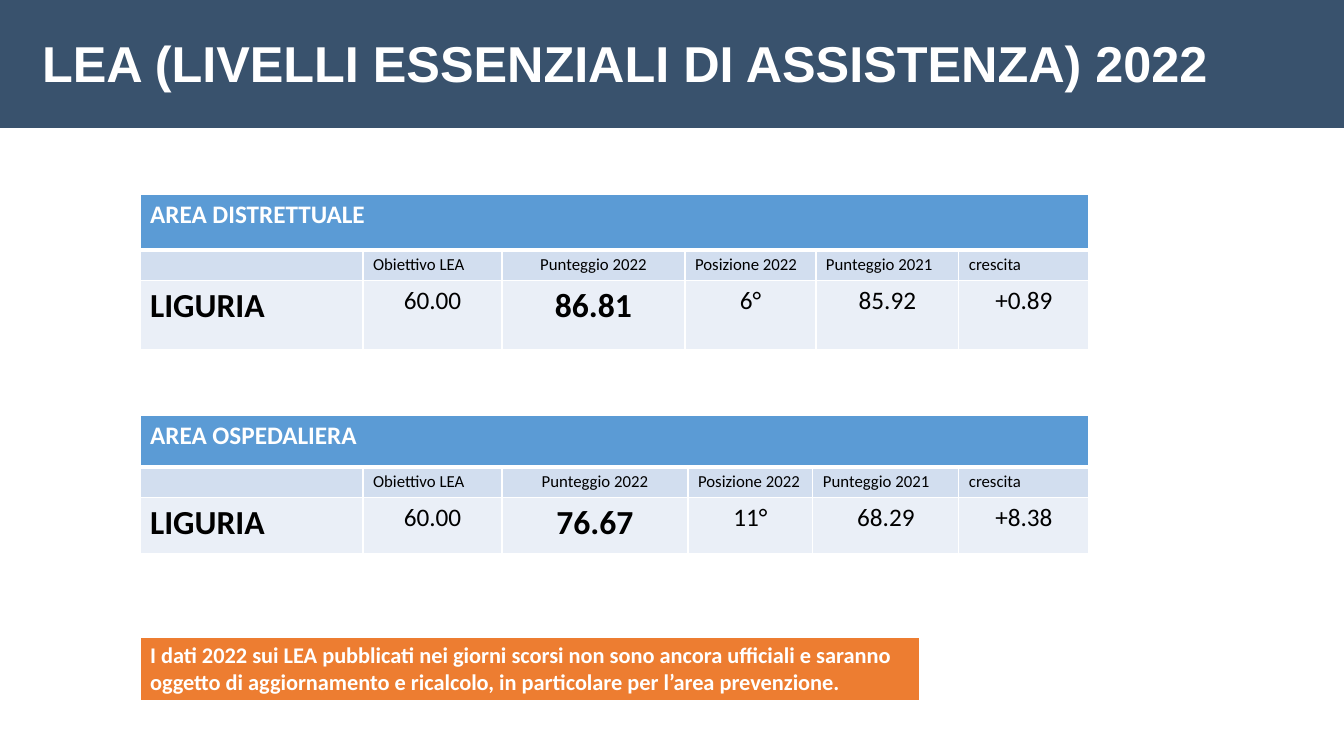
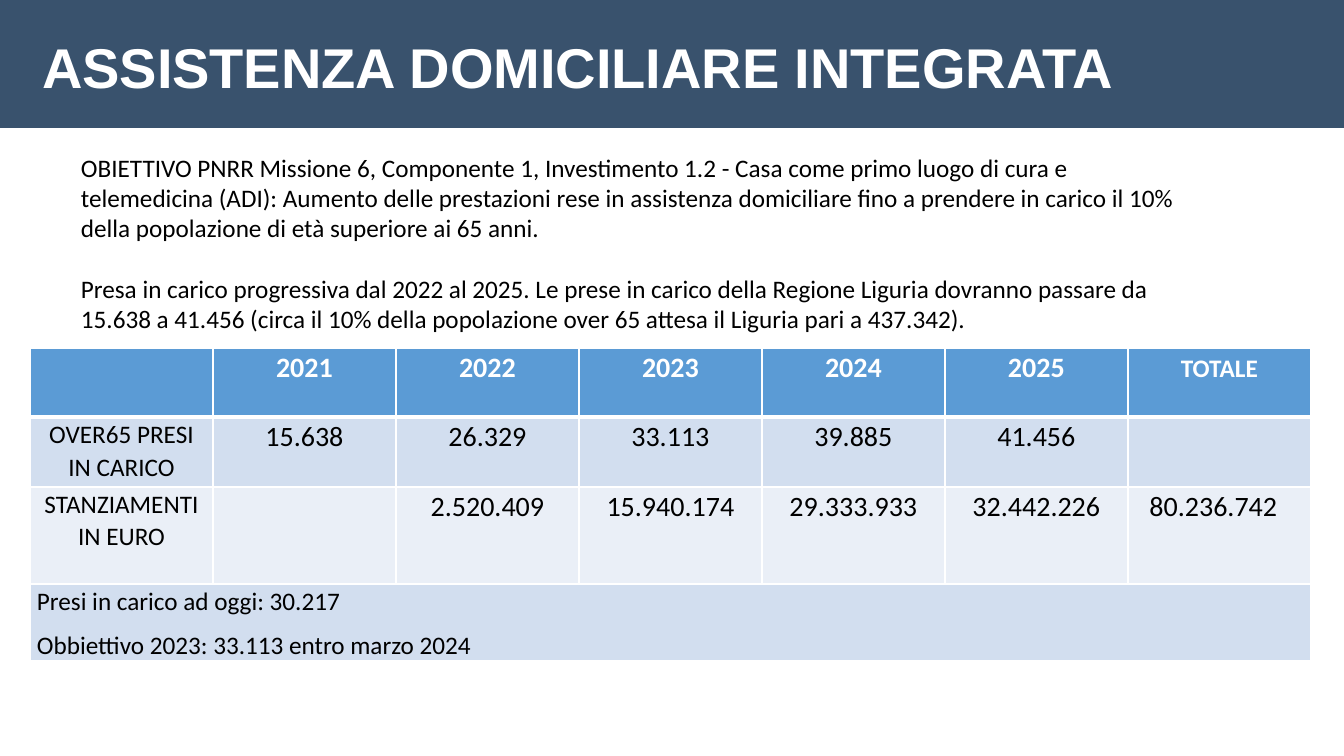
"""Build two slides on essential care levels and home care in Liguria."""
from lxml.etree import SubElement
from pptx import Presentation
from pptx.dml.color import RGBColor
from pptx.enum.shapes import MSO_SHAPE
from pptx.enum.text import MSO_ANCHOR, MSO_AUTO_SIZE, PP_ALIGN
from pptx.oxml.ns import qn
from pptx.util import Emu, Pt

WIDE, HIGH = 1344, 756
NAVY, BLUE, ORANGE = "39526D", "5B9BD5", "ED7D31"
MID, PALE, WHITE, BLACK = "D2DEEF", "EAEFF7", "FFFFFF", "000000"
LEFT, MIDDLE = PP_ALIGN.LEFT, PP_ALIGN.CENTER

TITLES = [("LEA (LIVELLI ESSENZIALI DI ASSISTENZA) 2022", 36),
          ("ASSISTENZA DOMICILIARE INTEGRATA", 40)]
AREAS = [
    ("AREA DISTRETTUALE", 194, (223, 139, 183, 131, 143, 130), (56, 30, 69),
     ("LIGURIA", "60.00", "86.81", "6°", "85.92", "+0.89")),
    ("AREA OSPEDALIERA", 415, (223, 139, 186, 125, 146, 130), (52, 30, 56),
     ("LIGURIA", "60.00", "76.67", "11°", "68.29", "+8.38")),
]
HEADS = ("", "Obiettivo LEA", "Punteggio 2022", "Posizione 2022",
         "Punteggio 2021", "crescita")
NOTE = ("I dati 2022 sui LEA pubblicati nei giorni scorsi non sono ancora "
        "ufficiali e saranno oggetto di aggiornamento e ricalcolo, in "
        "particolare per l’area prevenzione.")
GOALS = [
    "OBIETTIVO PNRR Missione 6, Componente 1, Investimento 1.2 - Casa come "
    "primo luogo di cura e telemedicina (ADI): Aumento delle prestazioni rese "
    "in assistenza domiciliare fino a prendere in carico il 10% della "
    "popolazione di età superiore ai 65 anni.",
    "Presa in carico progressiva dal 2022 al 2025. Le prese in carico della "
    "Regione Liguria dovranno passare da 15.638 a 41.456 (circa il 10% della "
    "popolazione over 65 attesa il Liguria pari a 437.342).",
]
YEARS = ("", "2021", "2022", "2023", "2024", "2025")
CARE = ("OVER65 PRESI IN CARICO", "15.638", "26.329", "33.113", "39.885",
        "41.456", "")
FUNDS = ("STANZIAMENTI IN EURO", "", "2.520.409", "15.940.174", "29.333.933",
         "32.442.226", "80.236.742")
STATUS = ("Presi in carico ad oggi: 30.217\n"
          "Obbiettivo 2023: 33.113 entro marzo 2024")


def px(num):
    return Emu(round(num * 12192000 / WIDE))


def color(code):
    return RGBColor.from_string(code)


def write(para, text, size, tone, bold=False, face="Calibri", align=LEFT):
    para.alignment = align
    if not text:
        SubElement(para._p, qn("a:endParaRPr"), sz=str(size * 100))
        return
    run = para.add_run()
    run.text = text
    font = run.font
    font.name, font.size, font.bold = face, Pt(size), bold
    font.color.rgb = color(tone)


def border(cell, top, bottom):
    props = cell._tc.get_or_add_tcPr()
    for side, width in (("L", 1), ("R", 1), ("T", top), ("B", bottom)):
        line = SubElement(props, qn("a:ln" + side), w=str(Pt(width)))
        fill = SubElement(line, qn("a:solidFill"))
        SubElement(fill, qn("a:srgbClr"), val=WHITE)


def grid(slide, left, top, cols, rows):
    """Draw rows of (height, fill, cells); a cell is text, size, bold, align, tight."""
    heights = [row[0] for row in rows]
    frame = slide.shapes.add_table(len(rows), len(cols), px(left), px(top),
                                   px(sum(cols)), px(sum(heights)))
    table = frame.table
    table.first_row = table.horz_banding = False
    for col, width in zip(table.columns, cols):
        col.width = px(width)
    above = 1
    for pos, (height, fill, cells) in enumerate(rows):
        table.rows[pos].height = px(height)
        strong = fill in (BLUE, ORANGE)
        below = 3 if strong else 1
        for num in range(len(cols)):
            cell = table.cell(pos, num)
            border(cell, above, below)
            cell.fill.solid()
            cell.fill.fore_color.rgb = color(fill)
        above = below
        if len(cells) < len(cols):
            table.cell(pos, 0).merge(table.cell(pos, len(cols) - 1))
        for num, (text, size, bold, align, tight) in enumerate(cells):
            cell = table.cell(pos, num)
            if tight:
                cell.margin_left = cell.margin_right = px(7)
                cell.margin_top = cell.margin_bottom = 0
            body = cell.text_frame
            for spot, part in enumerate(text.split("\n")):
                para = body.add_paragraph() if spot else body.paragraphs[0]
                if tight:
                    para.line_spacing, para.space_after = 1.07, Pt(8)
                write(para, part, size, WHITE if strong else BLACK, bold,
                      align=align)
    return table


def brand(layout, slide):
    band = slide.shapes.add_shape(MSO_SHAPE.RECTANGLE, 0, 0, px(WIDE), px(128))
    band.shadow.inherit = False
    band.fill.solid()
    band.fill.fore_color.rgb = color(NAVY)
    band.line.fill.background()
    layout.shapes.element.insert(2, band.element)
    title = layout.placeholders[0]
    title.left, title.top, title.width, title.height = map(px, (32, 27, 1300, 78))
    frame = title.text_frame
    frame.vertical_anchor = MSO_ANCHOR.TOP
    frame.auto_size = MSO_AUTO_SIZE.NONE


def areas(slide):
    for name, top, cols, heights, data in AREAS:
        heads = [(text, 12, False, MIDDLE if num == 2 else LEFT, False)
                 for num, text in enumerate(HEADS)]
        cells = [(text, 24 if num in (0, 2) else 18, num in (0, 2),
                  MIDDLE if num else LEFT, False)
                 for num, text in enumerate(data)]
        parts = ([(name, 18, True, LEFT, False)], heads, cells)
        grid(slide, 140, top, cols, list(zip(heights, (BLUE, MID, PALE), parts)))
    grid(slide, 140, 637, (780,),
         [(61, ORANGE, [(NOTE, 16, True, LEFT, False)])])


def care(slide):
    years = [(text, 20, True, MIDDLE, True) for text in YEARS]
    years.append(("TOTALE", 18, True, MIDDLE, False))
    body = [[(text, 20 if num else 18, False, MIDDLE, True)
             for num, text in enumerate(row)] for row in (CARE, FUNDS)]
    table = grid(slide, 30, 348, (183,) * 7, [
        (69, BLUE, years), (70, MID, body[0]), (97, PALE, body[1]),
        (76, MID, [(STATUS, 18, False, LEFT, True)])])
    table.cell(2, 6).margin_right = px(19)
    box = slide.shapes.add_textbox(*map(px, (71, 147, 1117, 194)))
    frame = box.text_frame
    frame.word_wrap = True
    for num, text in enumerate(GOALS):
        para = frame.add_paragraph() if num else frame.paragraphs[0]
        if num:
            para.space_before = Pt(22)
        write(para, text, 18, BLACK)


def main():
    deck = Presentation()
    deck.slide_width, deck.slide_height = px(WIDE), px(HIGH)
    layout = deck.slide_layouts[5]
    for num, (text, size) in enumerate(TITLES):
        slide = deck.slides.add_slide(layout)
        if not num:
            brand(layout, slide)
        title = slide.shapes.title.text_frame.paragraphs[0]
        write(title, text, size, WHITE, True, "Arial")
        (areas, care)[num](slide)
    deck.save("out.pptx")


if __name__ == "__main__":
    main()
